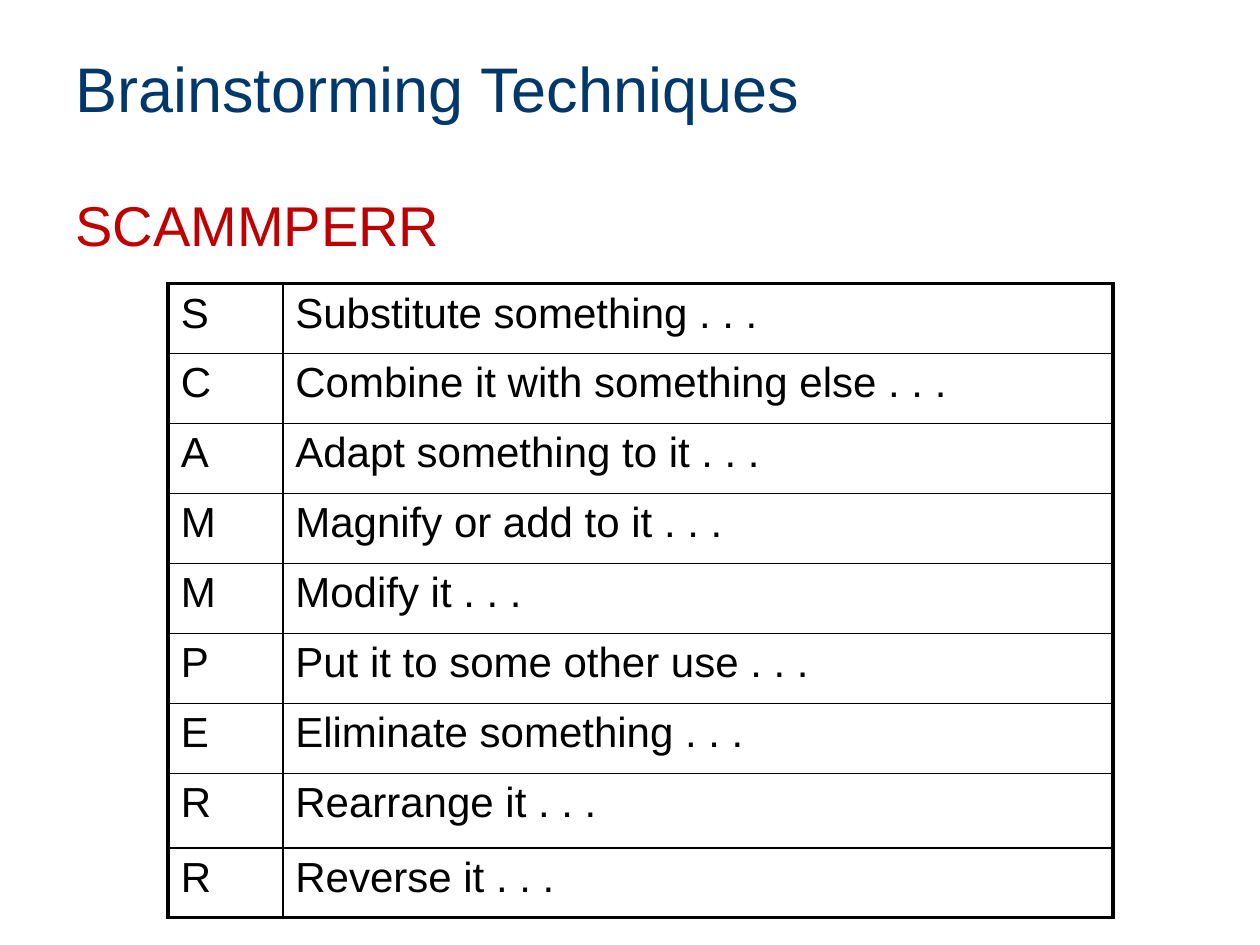
from lxml import etree
from pptx import Presentation
from pptx.dml.color import RGBColor
from pptx.enum.text import MSO_ANCHOR
from pptx.oxml.ns import qn
from pptx.util import Cm, Pt

NAVY = RGBColor(0x00, 0x38, 0x6B)
RED = RGBColor(0xC0, 0x00, 0x00)
BLACK = RGBColor(0x00, 0x00, 0x00)
MIDDLE, TOP = MSO_ANCHOR.MIDDLE, MSO_ANCHOR.TOP

FONT = "Arial"
THICK, THIN = Pt(2.25), Pt(1)
ROW_HEIGHT, TALL_ROW_HEIGHT, TALL_ROW = Cm(1.41), Cm(1.5), 7
LETTER_WIDTH = Cm(2.31)

TECHNIQUES = [
    ("S", "Substitute something . . ."),
    ("C", "Combine it with something else . . ."),
    ("A", "Adapt something to it . . ."),
    ("M", "Magnify or add to it . . ."),
    ("M", "Modify it . . ."),
    ("P", "Put it to some other use . . ."),
    ("E", "Eliminate something . . ."),
    ("R", "Rearrange it . . ."),
    ("R", "Reverse it . . ."),
]


def write_text(frame, text, size, color):
    span = frame.paragraphs[0].add_run()
    span.text = text
    for name, value in {"name": FONT, "size": Pt(size)}.items():
        setattr(span.font, name, value)
    span.font.color.rgb = color


def add_heading(page, box, text, size, color, anchor, margin_top):
    frame = page.shapes.add_textbox(*box).text_frame
    layout = {"word_wrap": True, "vertical_anchor": anchor, "margin_top": margin_top}
    for name, value in layout.items():
        setattr(frame, name, value)
    write_text(frame, text, size, color)


def set_borders(cell, widths):
    """Draw the left, right, top and bottom edges, placed ahead of the cell fill."""
    properties = cell._tc.get_or_add_tcPr()
    for position, (side, width) in enumerate(widths.items()):
        line = etree.Element(qn(f"a:ln{side}"), w=str(width))
        fill = etree.SubElement(line, qn("a:solidFill"))
        etree.SubElement(fill, qn("a:srgbClr"), val=str(BLACK))
        properties.insert(position, line)


def add_technique_table(page, box):
    left, top, width, height = box
    last = len(TECHNIQUES) - 1
    table = page.shapes.add_table(last + 1, 2, left, top, width, height).table
    table.first_row = table.horz_banding = False
    table.columns[0].width = LETTER_WIDTH
    table.columns[1].width = width - LETTER_WIDTH
    for row, texts in enumerate(TECHNIQUES):
        table.rows[row].height = TALL_ROW_HEIGHT if row == TALL_ROW else ROW_HEIGHT
        for column, text in enumerate(texts):
            cell = table.cell(row, column)
            cell.fill.background()
            write_text(cell.text_frame, text, 24, BLACK)
            outer = {"L": column == 0, "R": column == 1, "T": row == 0, "B": row == last}
            set_borders(cell, {side: THICK if edge else THIN for side, edge in outer.items()})


def main():
    deck = Presentation()
    deck.slide_width, deck.slide_height = Cm(25.4), Cm(19.05)
    page = deck.slides.add_slide(deck.slide_layouts[6])
    add_heading(page, (Cm(1.27), Cm(0.76), Cm(22.86), Cm(1.98)),
                "Brainstorming Techniques", 36, NAVY, MIDDLE, Cm(0.13))
    add_heading(page, (Cm(1.27), Cm(3.61), Cm(22.86), Cm(13.41)),
                "SCAMMPERR", 32, RED, TOP, Cm(0.23))
    add_technique_table(page, (Cm(3.39), Cm(5.72), Cm(19.05), Cm(12.78)))
    deck.save("out.pptx")


if __name__ == "__main__":
    main()
